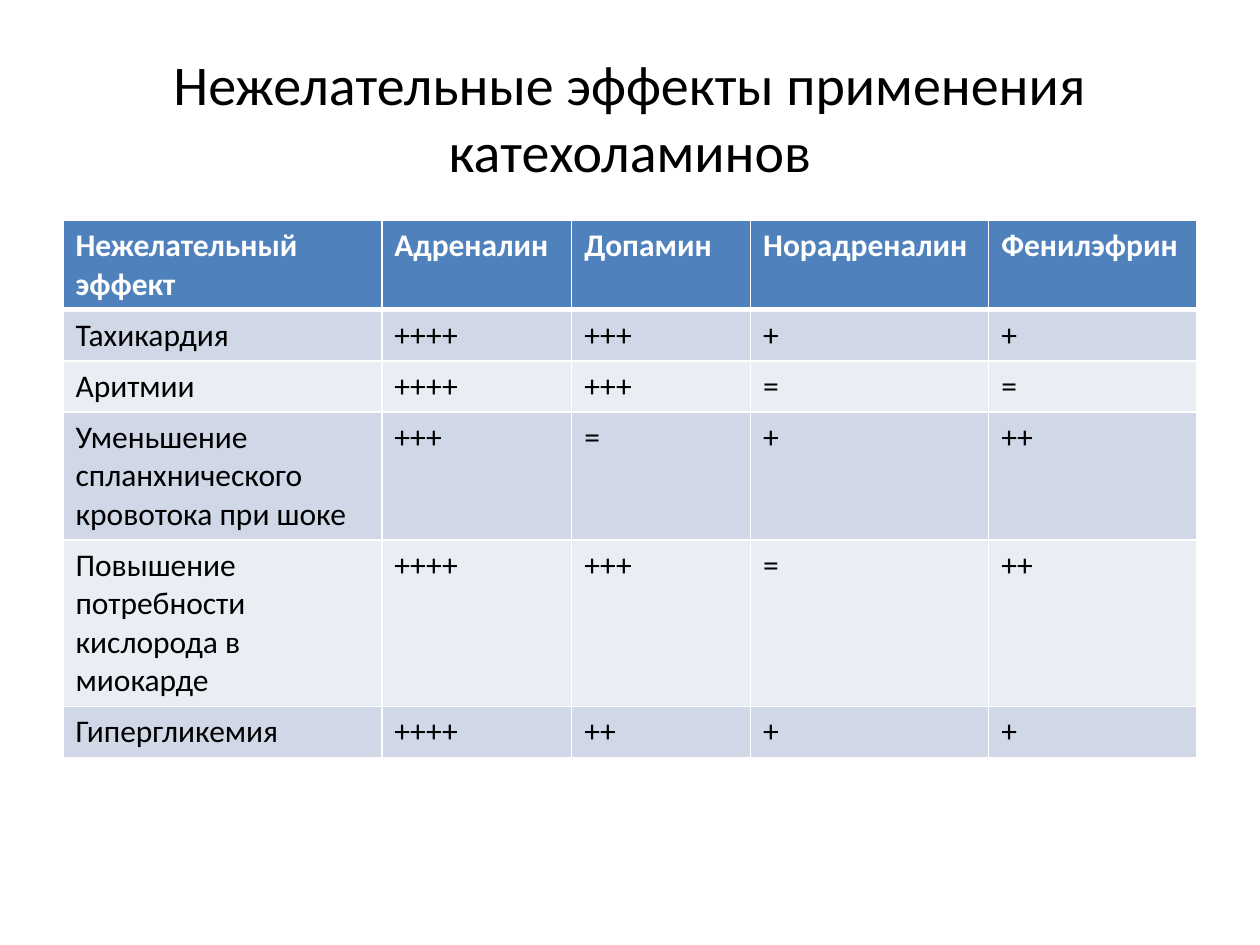
from lxml.etree import SubElement
from pptx import Presentation
from pptx.dml.color import RGBColor
from pptx.enum.text import MSO_ANCHOR, PP_ALIGN
from pptx.oxml.ns import qn
from pptx.util import Pt

WHITE = RGBColor(0xFF, 0xFF, 0xFF)
BLACK = RGBColor(0x00, 0x00, 0x00)
HEADER_BLUE = RGBColor(0x4F, 0x81, 0xBD)
BAND_DARK = RGBColor(0xD0, 0xD8, 0xE8)
BAND_LIGHT = RGBColor(0xE9, 0xED, 0xF4)

TITLE = "Нежелательные эффекты применения катехоламинов"
COLUMN_WIDTHS = [182.16, 108.56, 102.24, 136.08, 118.96]
ROW_HEIGHTS = [51, 29.2, 29.2, 73.2, 95, 29.2]
EFFECTS = [
    ["Нежелательный эффект", "Адреналин", "Допамин", "Норадреналин", "Фенилэфрин"],
    ["Тахикардия", "++++", "+++", "+", "+"],
    ["Аритмии", "++++", "+++", "=", "="],
    ["Уменьшение спланхнического кровотока при шоке", "+++", "=", "+", "++"],
    ["Повышение потребности кислорода в миокарде", "++++", "+++", "=", "++"],
    ["Гипергликемия", "++++", "++", "+", "+"],
]


def write_text(frame, text, size=18, color=BLACK, bold=False, align=PP_ALIGN.LEFT):
    """Fill a text frame with one formatted paragraph."""
    paragraph = frame.paragraphs[0]
    paragraph.alignment = align
    span = paragraph.add_run()
    span.text = text
    span.font.name = "Calibri"
    span.font.size = Pt(size)
    span.font.bold = bold
    span.font.color.rgb = color


def add_title(page, text):
    """Add the centred slide title."""
    box = page.shapes.add_textbox(Pt(36), Pt(21.6), Pt(648), Pt(90))
    box.text_frame.word_wrap = True
    box.text_frame.vertical_anchor = MSO_ANCHOR.MIDDLE
    write_text(box.text_frame, text, size=32, align=PP_ALIGN.CENTER)


def set_borders(cell, color, **widths):
    """Draw cell borders; each keyword is a side (L, R, T, B) with its width."""
    properties = cell._tc.get_or_add_tcPr()
    for side, width in widths.items():
        line = SubElement(properties, qn(f"a:ln{side}"), w=str(Pt(width)))
        fill = SubElement(line, qn("a:solidFill"))
        SubElement(fill, qn("a:srgbClr"), val=str(color))


def format_cell(cell, text, row):
    """Write one cell as a header or as part of a banded row."""
    header = row == 0
    band = BAND_DARK if row % 2 else BAND_LIGHT
    set_borders(cell, WHITE, L=1, R=1, T=3 if row == 1 else 1, B=3 if header else 1)
    cell.fill.solid()
    cell.fill.fore_color.rgb = HEADER_BLUE if header else band
    write_text(cell.text_frame, text, color=WHITE if header else BLACK, bold=header)


def add_effects_table(page, rows):
    """Add the table of adverse effects by drug."""
    frame = page.shapes.add_table(
        len(rows), len(COLUMN_WIDTHS), Pt(36), Pt(126),
        Pt(sum(COLUMN_WIDTHS)), Pt(sum(ROW_HEIGHTS)))
    table = frame.table
    for column, width in zip(table.columns, COLUMN_WIDTHS):
        column.width = Pt(width)
    for row, texts in enumerate(rows):
        table.rows[row].height = Pt(ROW_HEIGHTS[row])
        for column, text in enumerate(texts):
            format_cell(table.cell(row, column), text, row)


def main():
    """Build the slide and save the deck."""
    deck = Presentation()
    deck.slide_width, deck.slide_height = Pt(720), Pt(540)
    page = deck.slides.add_slide(deck.slide_layouts[6])
    add_title(page, TITLE)
    add_effects_table(page, EFFECTS)
    deck.save("out.pptx")


if __name__ == "__main__":
    main()
